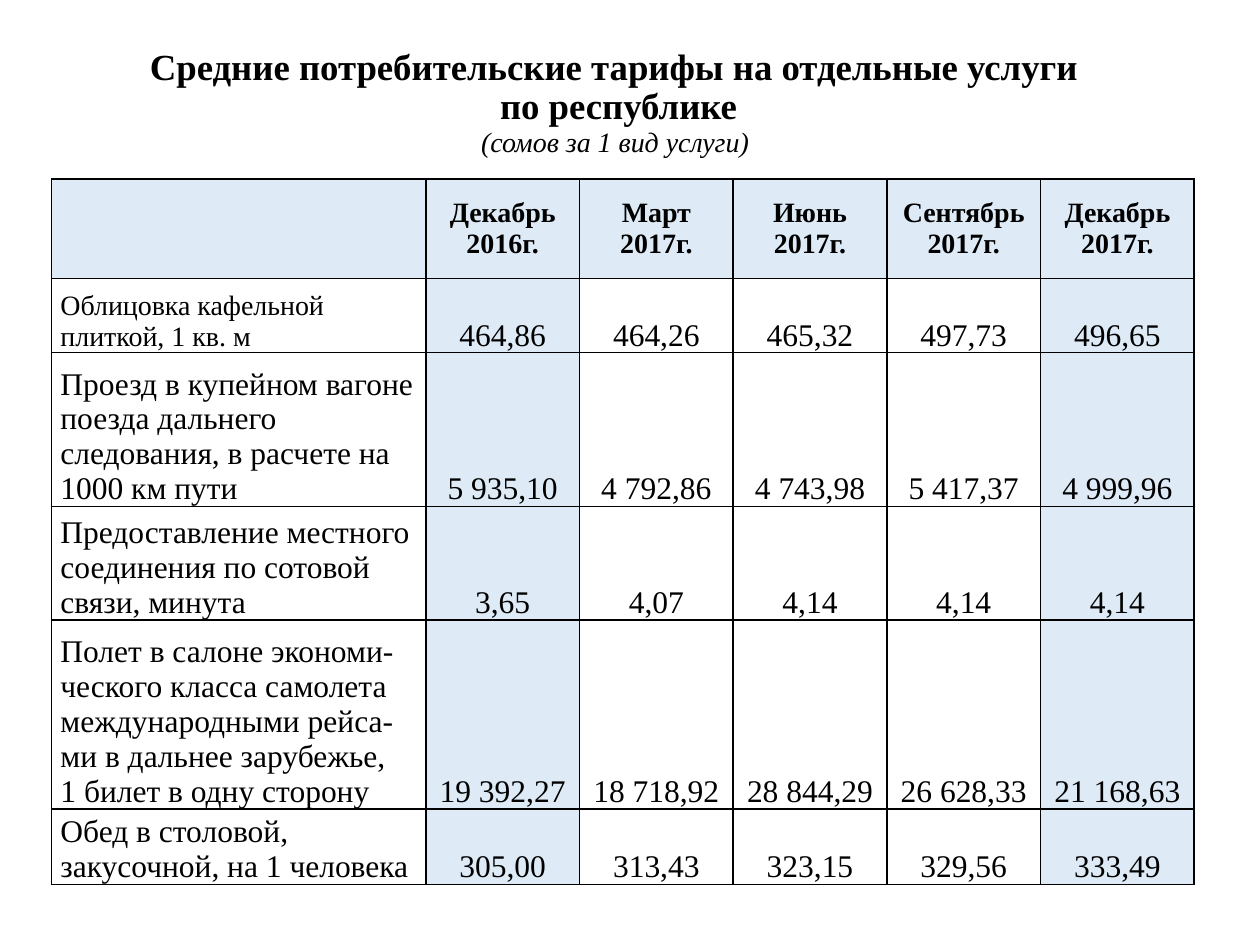
"""Builds a slide with a table of average consumer tariffs for services."""
import pptx
import pptx.dml.color
import pptx.enum.text
import pptx.oxml
import pptx.oxml.ns
import pptx.util

Inches = pptx.util.Inches
Pt = pptx.util.Pt
ALIGN = pptx.enum.text.PP_ALIGN
ANCHOR = pptx.enum.text.MSO_ANCHOR

TITLE = [
    ("Средние потребительские тарифы на отдельные услуги ", {"size": Pt(21), "bold": True}),
    ("по республике", {"size": Pt(21), "bold": True}),
    ("(сомов за 1 вид услуги) ", {"size": Pt(16), "bold": False, "italic": True}),
]
PERIODS = ["Декабрь 2016г.", "Март 2017г.", "Июнь 2017г.", "Сентябрь 2017г.", "Декабрь 2017г."]
SERVICES = [
    ("Облицовка кафельной плиткой, 1 кв. м",
     ["464,86", "464,26", "465,32", "497,73", "496,65"]),
    ("Проезд в купейном вагоне поезда дальнего следования, в расчете на 1000 км пути",
     ["5 935,10", "4 792,86", "4 743,98", "5 417,37", "4 999,96"]),
    ("Предоставление местного соединения по сотовой связи, минута",
     ["3,65", "4,07", "4,14", "4,14", "4,14"]),
    ("Полет в салоне экономи-ческого класса самолета международными рейса-ми "
     "в дальнее зарубежье,\n1 билет в одну сторону",
     ["19 392,27", "18 718,92", "28 844,29", "26 628,33", "21 168,63"]),
    ("Обед в столовой, закусочной, на 1 человека",
     ["305,00", "313,43", "323,15", "329,56", "333,49"]),
]
COLUMN_WIDTHS = [2.97] + [1.22] * len(PERIODS)
ROW_HEIGHTS = [0.79, 0.59, 1.22, 0.83, 1.39, 0.56]
SHADED_COLUMNS = (1, len(PERIODS))


def color(value):
    return pptx.dml.color.RGBColor.from_string(value)


def apply(target, values):
    for name, value in values.items():
        setattr(target, name, value)


class SlideBuilder:
    font = "Times New Roman"
    ink = "000000"
    shade = "DEEBF7"

    def __init__(self, slide):
        self.slide = slide

    def run(self, paragraph, text, style):
        run = paragraph.add_run()
        run.text = text
        apply(run.font, {"name": self.font, **style})
        run.font.color.rgb = color(self.ink)

    def title(self, lines, left, top, width, height):
        box = self.slide.shapes.add_textbox(Inches(left), Inches(top), Inches(width), Inches(height))
        apply(box.text_frame, {"word_wrap": True, "vertical_anchor": ANCHOR.MIDDLE})
        paragraph = box.text_frame.paragraphs[0]
        apply(paragraph, {"alignment": ALIGN.CENTER, "line_spacing": 0.9})
        for index, (text, style) in enumerate(lines):
            if index:
                paragraph.add_line_break()
            self.run(paragraph, text, style)

    def table(self, left, top, widths, heights):
        frame = self.slide.shapes.add_table(
            len(heights), len(widths), Inches(left), Inches(top),
            Inches(sum(widths)), Inches(sum(heights)))
        table = frame.table
        apply(table, {"first_row": False, "horz_banding": False})
        for column, width in zip(table.columns, widths):
            column.width = Inches(width)
        for row, height in zip(table.rows, heights):
            row.height = Inches(height)
        return table

    def borders(self, cell):
        properties = cell._tc.get_or_add_tcPr()
        for side in ("lnL", "lnR", "lnT", "lnB"):
            properties.append(pptx.oxml.parse_xml(
                f'<a:{side} {pptx.oxml.ns.nsdecls("a")} w="{Pt(1)}"><a:solidFill>'
                f'<a:srgbClr val="{self.ink}"/></a:solidFill></a:{side}>'))

    def cell(self, cell, text, shaded, margin, anchor, layout, style):
        self.borders(cell)
        if shaded:
            cell.fill.solid()
            cell.fill.fore_color.rgb = color(self.shade)
        else:
            cell.fill.background()
        apply(cell, {"margin_left": Inches(margin), "margin_right": Inches(margin),
                     "margin_top": 0, "margin_bottom": 0, "vertical_anchor": anchor})
        if not text:
            return
        for index, line in enumerate(text.split("\n")):
            frame = cell.text_frame
            paragraph = frame.add_paragraph() if index else frame.paragraphs[0]
            apply(paragraph, layout)
            self.run(paragraph, line, style)


def main():
    presentation = pptx.Presentation()
    apply(presentation, {"slide_width": Inches(10), "slide_height": Inches(7.5)})
    builder = SlideBuilder(presentation.slides.add_slide(presentation.slide_layouts[6]))
    builder.title(TITLE, 0.41, 0.31, 9, 1.02)
    table = builder.table(0.41, 1.42, COLUMN_WIDTHS, ROW_HEIGHTS)

    header_layout = {"alignment": ALIGN.CENTER, "space_before": Pt(4), "space_after": Pt(4)}
    for column, text in enumerate([""] + PERIODS):
        builder.cell(table.cell(0, column), text, True, 0.07, ANCHOR.MIDDLE,
                     header_layout, {"size": Pt(16), "bold": True})

    for row, (service, tariffs) in enumerate(SERVICES, start=1):
        label_size = Pt(16 if row == 1 else 18)
        builder.cell(table.cell(row, 0), service, False, 0.07, ANCHOR.BOTTOM,
                     {"alignment": ALIGN.LEFT}, {"size": label_size, "bold": False})
        for column, tariff in enumerate(tariffs, start=1):
            builder.cell(table.cell(row, column), tariff, column in SHADED_COLUMNS, 0,
                         ANCHOR.BOTTOM, {"alignment": ALIGN.CENTER},
                         {"size": Pt(18), "bold": False})
    presentation.save("out.pptx")


if __name__ == "__main__":
    main()
